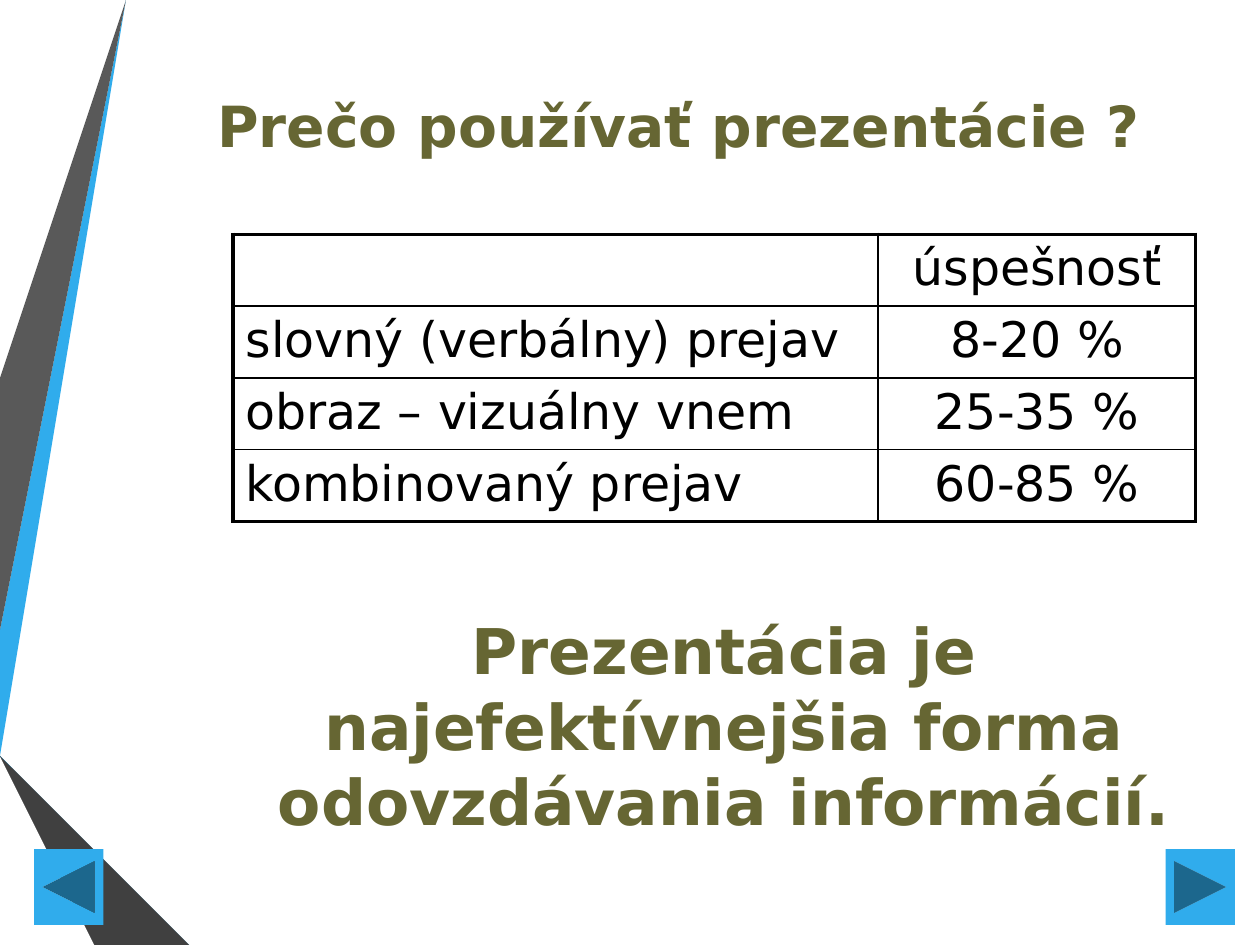
import dataclasses

import pptx
import pptx.dml.color
import pptx.enum.shapes
import pptx.enum.text
import pptx.oxml.ns
import pptx.util
from lxml import etree
from pptx.util import Inches


@dataclasses.dataclass
class Theme:
    font: str = "DejaVu Sans"
    olive: str = "666633"
    black: str = "000000"
    blue: str = "30ACEC"
    title: float = 32.4
    body: float = 36
    cell: float = 28


theme = Theme()
rgb = pptx.dml.color.RGBColor.from_string
align = pptx.enum.text.PP_ALIGN
kinds = pptx.enum.shapes.MSO_SHAPE
middle = pptx.enum.text.MSO_ANCHOR.MIDDLE


def put_text(frame, text, size, color=theme.black, bold=False, place=align.CENTER):
    para = frame.paragraphs[0]
    para.alignment = place
    run = para.add_run()
    run.text = text
    run.font.name = theme.font
    run.font.size = pptx.util.Pt(size)
    run.font.bold = bold
    run.font.color.rgb = rgb(color)


def add_edge(cell, side, width):
    """Draw one border of a table cell; side is L, R, T or B."""
    props = cell._tc.get_or_add_tcPr()
    tag = pptx.oxml.ns.qn
    line = etree.SubElement(props, tag("a:ln" + side), w=str(pptx.util.Pt(width)))
    fill = etree.SubElement(line, tag("a:solidFill"))
    etree.SubElement(fill, tag("a:srgbClr"), val=theme.black)


deck = pptx.Presentation()
deck.slide_width, deck.slide_height = Inches(10), Inches(7.5)
slide = deck.slides.add_slide(deck.slide_layouts[6])
shapes = slide.shapes

# Ribbons along the left edge
ribbons = [
    (theme.blue, [(0, 5.44), (0, 5.75), (0.22, 5.79), (1.17, 0), (0.89, 0)]),
    ("595959", [(0.83, 0), (0.55, 0), (0, 3.36), (0, 5.06)]),
    ("262626", [(0, 6.19), (0, 6.21), (0.93, 7.5), (0.99, 7.5)]),
    ("0C5A82", [(0, 5.79), (0, 5.8), (1.56, 7.5), (1.63, 7.5)]),
    ("1287C3", [(0, 5.79), (1.63, 7.5), (2.33, 7.5), (0.22, 5.79), (0, 5.75)]),
    ("404040", [(0, 6.19), (0.99, 7.5), (1.51, 7.5), (0, 5.86)]),
]
for color, points in ribbons:
    pen = shapes.build_freeform(*points[0], scale=Inches(1))
    pen.add_line_segments(points[1:], close=True)
    ribbon = pen.convert_to_shape()
    ribbon.shadow.inherit = False
    ribbon.fill.solid()
    ribbon.fill.fore_color.rgb = rgb(color)
    ribbon.line.fill.background()

# Success table
rows = [
    ("", "úspešnosť"),
    ("slovný (verbálny) prejav", "8-20 %"),
    ("obraz – vizuálny vnem", "25-35 %"),
    ("kombinovaný prejav", "60-85 %"),
]
table = shapes.add_table(
    len(rows), 2, Inches(1.85), Inches(1.86), Inches(7.64), Inches(2.28)
).table
table.first_row = table.horz_banding = False
table.columns[0].width, table.columns[1].width = Inches(5.12), Inches(2.52)
last = len(rows) - 1
thick, thin = 2.25, 1
for r, row in enumerate(rows):
    table.rows[r].height = Inches(0.57)
    for c, text in enumerate(row):
        cell = table.cell(r, c)
        if text:
            put_text(cell.text_frame, text, theme.cell,
                     place=align.CENTER if c else align.LEFT)
        outer = {"L": c == 0, "R": c == 1, "T": r == 0, "B": r == last}
        for side, edge in outer.items():
            add_edge(cell, side, thick if edge else thin)
        cell.fill.background()

# Title and closing statement: box, text, size, left and right inset
texts = [
    ((1.53, 0.66, 8.04, 0.66), "Prečo používať prezentácie ?", theme.title, 0.1, 0.42),
    ((1.69, 4.73, 7.8, 2.05),
     "Prezentácia je najefektívnejšia forma odovzdávania informácií.",
     theme.body, 0.41, 0.1),
]
for box, text, size, left, right in texts:
    frame = shapes.add_textbox(*map(Inches, box)).text_frame
    frame.word_wrap = True
    frame.vertical_anchor = middle
    frame.margin_left, frame.margin_right = Inches(left), Inches(right)
    put_text(frame, text, size, color=theme.olive, bold=True)

# Navigation buttons
buttons = [
    (kinds.ACTION_BUTTON_BACK_OR_PREVIOUS, 0.27),
    (kinds.ACTION_BUTTON_FORWARD_OR_NEXT, 9.25),
]
for kind, left in buttons:
    button = shapes.add_shape(kind, Inches(left), Inches(6.74), Inches(0.55), Inches(0.6))
    button.shadow.inherit = False
    button.fill.solid()
    button.fill.fore_color.rgb = rgb(theme.blue)
    button.line.fill.background()

deck.save("out.pptx")
